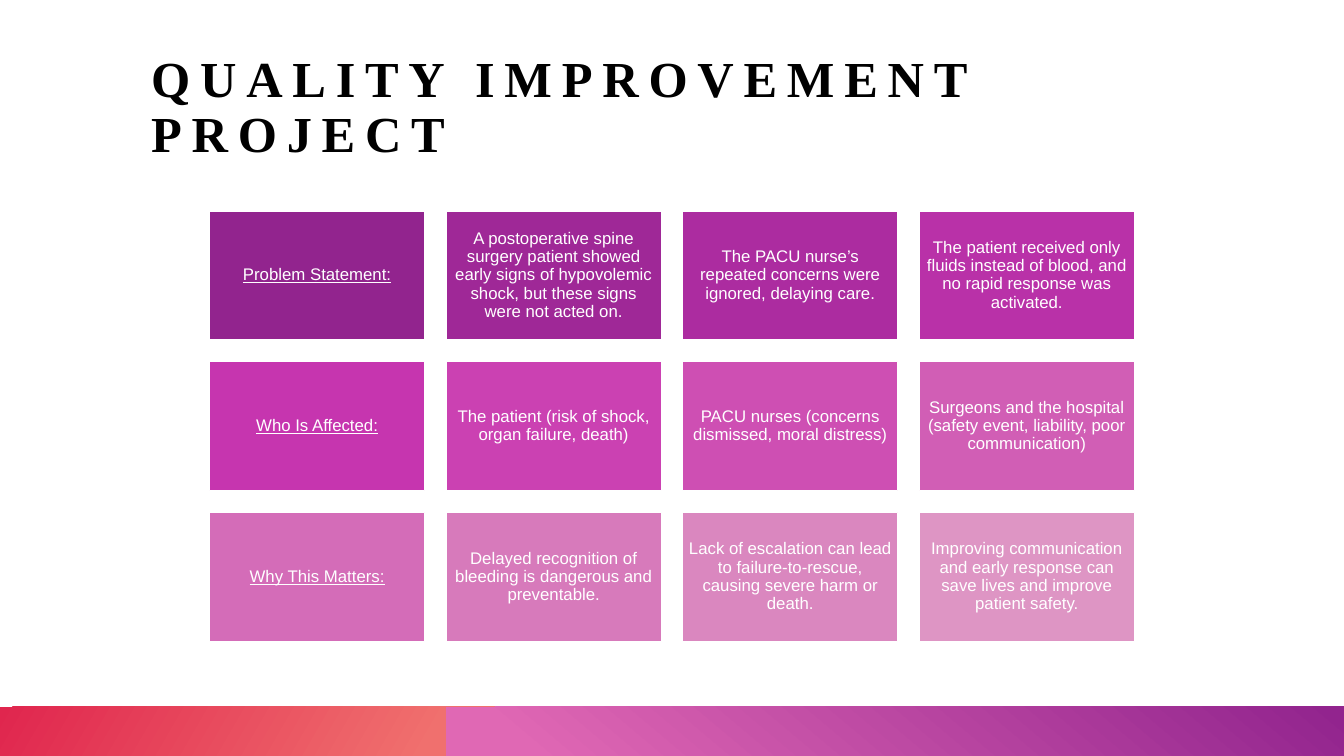
from dataclasses import dataclass
from typing import Any

from pptx import Presentation
from pptx.dml.color import RGBColor
from pptx.enum.shapes import MSO_SHAPE as Shape
from pptx.enum.text import MSO_ANCHOR as Anchor, PP_ALIGN as Align
from pptx.util import Emu, Inches, Pt

SLIDE_WIDTH, SLIDE_HEIGHT = Inches(13.333), Inches(7.5)


@dataclass(frozen=True)
class Theme:
    title_font: str = "Times New Roman"
    title_size: int = 36
    title_color: str = "000000"
    title_tracking: int = 700
    card_font: str = "Arial"
    card_size: int = 12
    card_text: str = "FFFFFF"
    card_border: str = "FFFFFF"
    card_fills: tuple[tuple[str, ...], ...] = (
        ("92248E", "9F2897", "AC2CA0", "B931A8"),
        ("C635AF", "CB41B2", "CE4FB3", "D15EB5"),
        ("D46CB8", "D77ABB", "DA87BF", "DE95C4"),
    )
    warm: tuple[str, str] = ("E0264E", "F0706E")
    violet: tuple[str, str] = ("E068B4", "92248E")


@dataclass(frozen=True)
class Box:
    """Percentages of the slide's width and height."""

    left: float
    top: float
    width: float
    height: float

    def lengths(self) -> tuple[Emu, Emu, Emu, Emu]:
        return (
            Emu(round(SLIDE_WIDTH * self.left / 100)),
            Emu(round(SLIDE_HEIGHT * self.top / 100)),
            Emu(round(SLIDE_WIDTH * self.width / 100)),
            Emu(round(SLIDE_HEIGHT * self.height / 100)),
        )


@dataclass(frozen=True)
class Grid:
    first: Box
    column_step: float
    row_step: float

    def cell(self, column: int, row: int) -> Box:
        return Box(
            self.first.left + column * self.column_step,
            self.first.top + row * self.row_step,
            self.first.width,
            self.first.height,
        )


@dataclass(frozen=True)
class Band:
    box: Box
    colors: tuple[str, str]
    stops: tuple[float, float]
    angle: int


THEME = Theme()
TITLE = "QUALITY IMPROVEMENT PROJECT"
TITLE_BOX = Box(11.25, 6.93, 77.5, 14.67)
CARD_GRID = Grid(Box(15.6, 27.9, 16, 17.07), 17.6, 19.93)
BANDS = (
    Band(Box(0, 93.47, 100, 6.53), THEME.warm, (0, 0.33), 330),
    Band(Box(33.15, 93.47, 66.85, 6.53), THEME.violet, (0.09, 0.99), 50),
)
CARDS = (
    (
        "Problem Statement:",
        "A postoperative spine surgery patient showed early signs of hypovolemic shock, "
        "but these signs were not acted on.",
        "The PACU nurse’s repeated concerns were ignored, delaying care.",
        "The patient received only fluids instead of blood, and no rapid response was activated.",
    ),
    (
        "Who Is Affected:",
        "The patient (risk of shock, organ failure, death)",
        "PACU nurses (concerns dismissed, moral distress)",
        "Surgeons and the hospital (safety event, liability, poor communication)",
    ),
    (
        "Why This Matters:",
        "Delayed recognition of bleeding is dangerous and preventable.",
        "Lack of escalation can lead to failure-to-rescue, causing severe harm or death.",
        "Improving communication and early response can save lives and improve patient safety.",
    ),
)


def apply_format(target: Any, values: dict[str, Any]) -> None:
    for name, value in values.items():
        setattr(target, name, value)


def write_text(shape: Any, text: str, margin: float, anchor: Any, align: Any,
               font: dict[str, Any], color: str) -> Any:
    frame = shape.text_frame
    sides = ("margin_left", "margin_top", "margin_right", "margin_bottom")
    apply_format(frame, {"word_wrap": True, "vertical_anchor": anchor,
                         **dict.fromkeys(sides, Inches(margin))})
    paragraph = frame.paragraphs[0]
    apply_format(paragraph, {"alignment": align, "line_spacing": 0.9})
    run = paragraph.add_run()
    run.text = text
    apply_format(run.font, font)
    run.font.color.rgb = RGBColor.from_string(color)
    return run


def add_rectangle(slide: Any, box: Box) -> Any:
    shape = slide.shapes.add_shape(Shape.RECTANGLE, *box.lengths())
    shape.shadow.inherit = False
    return shape


def add_title(slide: Any) -> None:
    shape = slide.shapes.add_textbox(*TITLE_BOX.lengths())
    font = {"name": THEME.title_font, "size": Pt(THEME.title_size), "bold": True}
    run = write_text(shape, TITLE, 0, Anchor.BOTTOM, Align.LEFT, font, THEME.title_color)
    run.font._element.set("spc", str(THEME.title_tracking))


def add_band(slide: Any, band: Band) -> None:
    shape = add_rectangle(slide, band.box)
    shape.line.fill.background()
    shape.fill.gradient()
    shape.fill.gradient_angle = band.angle
    for stop, color, position in zip(shape.fill.gradient_stops, band.colors, band.stops):
        stop.color.rgb = RGBColor.from_string(color)
        stop.position = position


def add_card(slide: Any, box: Box, text: str, fill: str, heading: bool) -> None:
    shape = add_rectangle(slide, box)
    shape.fill.solid()
    shape.fill.fore_color.rgb = RGBColor.from_string(fill)
    shape.line.color.rgb = RGBColor.from_string(THEME.card_border)
    shape.line.width = Pt(1)
    font = {"name": THEME.card_font, "size": Pt(THEME.card_size), "underline": heading}
    write_text(shape, text, 0.05, Anchor.MIDDLE, Align.CENTER, font, THEME.card_text)


def main() -> None:
    presentation = Presentation()
    apply_format(presentation, {"slide_width": SLIDE_WIDTH, "slide_height": SLIDE_HEIGHT})
    slide = presentation.slides.add_slide(presentation.slide_layouts[6])
    add_title(slide)
    for band in BANDS:
        add_band(slide, band)
    for row, (texts, fills) in enumerate(zip(CARDS, THEME.card_fills)):
        for column, (text, fill) in enumerate(zip(texts, fills)):
            add_card(slide, CARD_GRID.cell(column, row), text, fill, column == 0)
    presentation.save("out.pptx")


if __name__ == "__main__":
    main()
